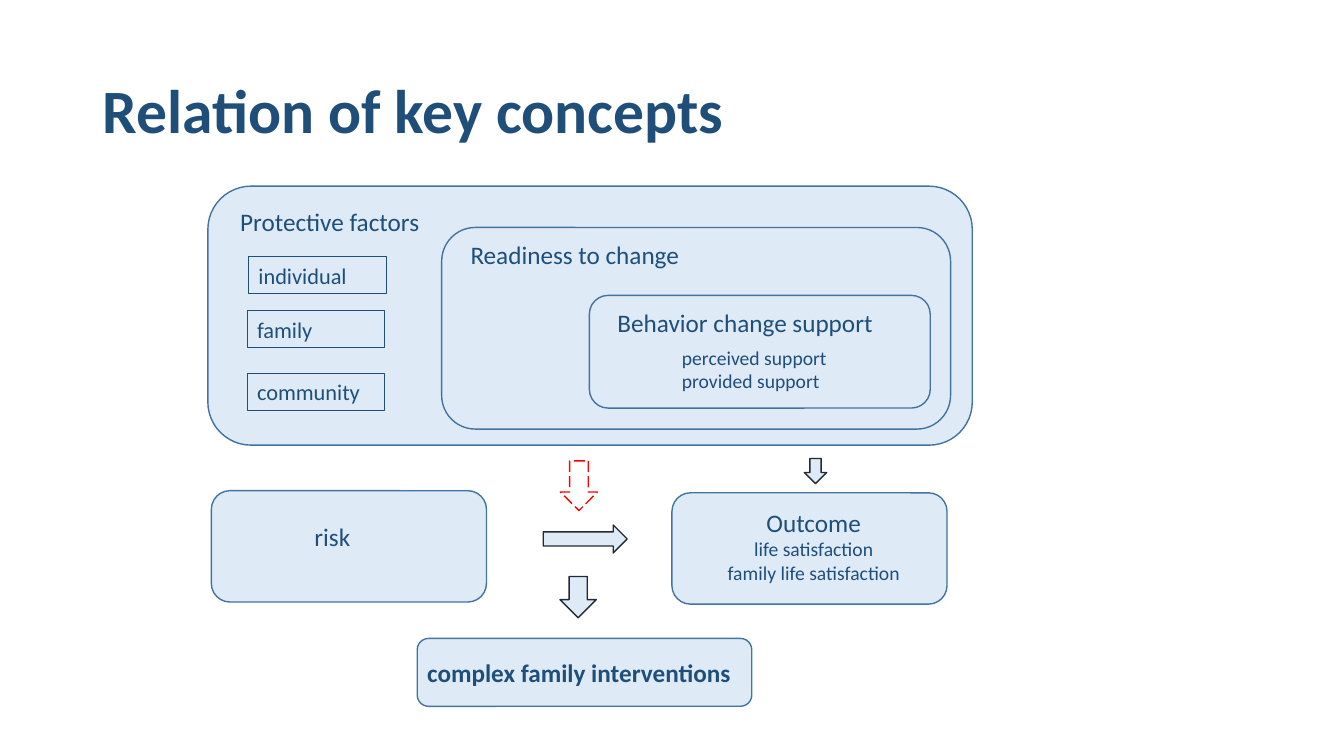
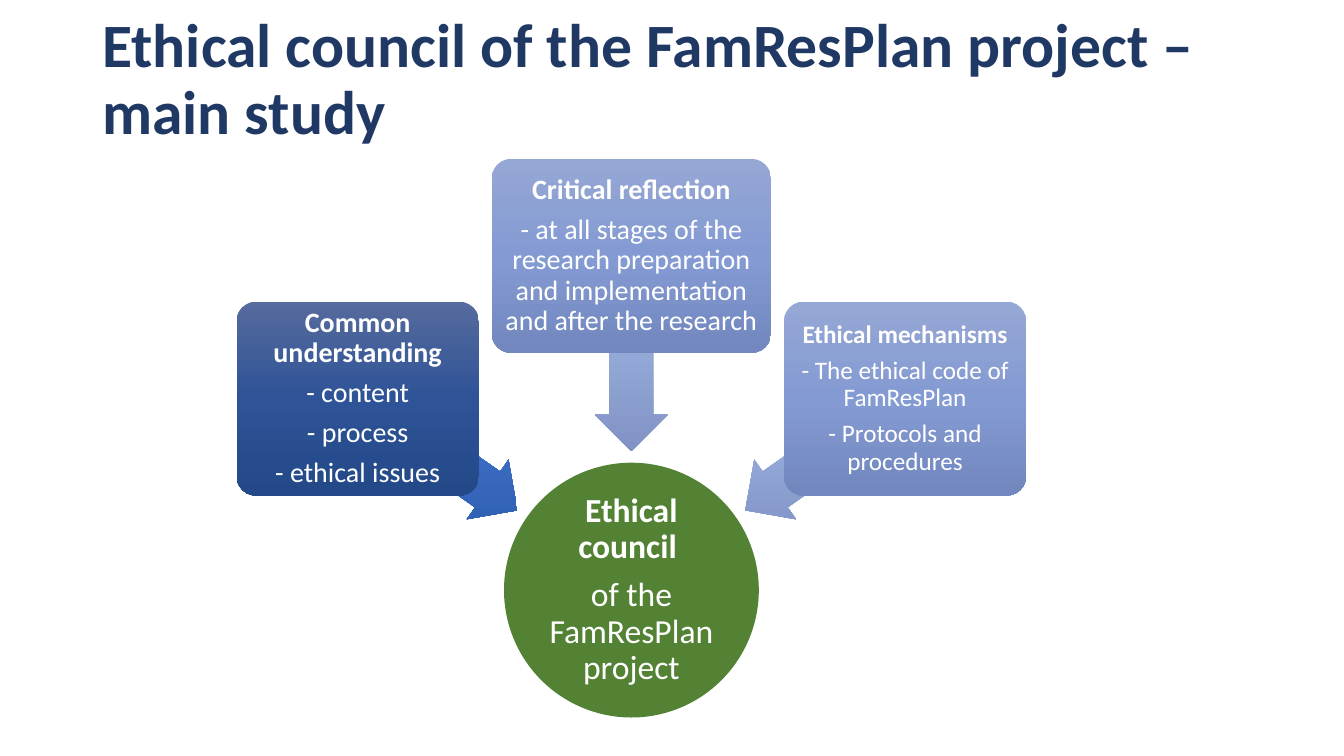
from collections import namedtuple
from copy import deepcopy

from pptx import Presentation
from pptx.dml.color import RGBColor
from pptx.enum.dml import MSO_LINE
from pptx.enum.shapes import MSO_SHAPE as Preset
from pptx.enum.text import MSO_ANCHOR as Anchor, MSO_AUTO_SIZE as AutoSize, PP_ALIGN as Align
from pptx.oxml.ns import qn
from pptx.util import Pt

Box = namedtuple("Box", "left top width height")

FONT = "Calibri"
NAVY = "1F4E79"
TITLE_NAVY = "203864"
PALE = "DEEBF7"
BORDER = "43739E"
ARROW_BORDER = "222A35"
RED = "FF0000"
GREEN = "548235"
WHITE = "FFFFFF"
DARK_CARD = ("566B9E", "2E5396", "244989")
LIGHT_CARD = ("95A7D4", "849AD2", "7187BE")
DARK_ARROW = ("5E7EC4", "3B6BC1", "2F5EB1")
LIGHT_ARROW = ("A4B3DB", "94A8D8", "8093C4")


def color(value):
    return RGBColor.from_string(value)


def inside(box, left, top, width, height):
    return Box(box.left + left, box.top + top, width, height)


def centered(x, y, width, height):
    return Box(x - width / 2, y - height / 2, width, height)


def points(box):
    return [Pt(length) for length in box]


def format_paragraph(paragraph, size, font_color, bold=False, align=Align.LEFT):
    paragraph.alignment = align
    paragraph.font.name = FONT
    paragraph.font.size = Pt(size)
    paragraph.font.bold = bold
    paragraph.font.color.rgb = color(font_color)


def fill_gradient(shape, colors):
    shape.fill.gradient()
    shape.fill.gradient_angle = 270
    gradient = shape._element.spPr.find(qn("a:gradFill"))
    gradient.set("rotWithShape", "0")
    stop_list = gradient.find(qn("a:gsLst"))
    stop_list.insert(1, deepcopy(stop_list[0]))
    for index, stop in enumerate(shape.fill.gradient_stops):
        stop.position = index / 2
        stop.color.rgb = color(colors[index])


def add_shape(slide, preset, box, fill=None, line=None, rotation=0):
    shape = slide.shapes.add_shape(preset, *points(box))
    shape.shadow.inherit = False
    shape.rotation = rotation
    if fill is None:
        shape.fill.background()
    elif isinstance(fill, tuple):
        fill_gradient(shape, fill)
    else:
        shape.fill.solid()
        shape.fill.fore_color.rgb = color(fill)
    if line is None:
        shape.line.fill.background()
    else:
        shape.line.color.rgb = color(line)
        shape.line.width = Pt(1)
    return shape


def add_label(slide, box, lines, size=18, bold=False, align=Align.LEFT):
    label = slide.shapes.add_textbox(*points(box))
    frame = label.text_frame
    frame.word_wrap = True
    frame.text = "\n".join(lines)
    for paragraph in frame.paragraphs:
        format_paragraph(paragraph, size, NAVY, bold, align)
    return label


def add_panel(slide, box):
    add_shape(slide, Preset.ROUNDED_RECTANGLE, box, PALE, BORDER)


def add_title_slide(presentation, text, top, font_color):
    slide = presentation.slides.add_slide(presentation.slide_layouts[5])
    title = slide.shapes.title
    title.left, title.top, title.width, title.height = points(Box(66, top, 828, 104.4))
    frame = title.text_frame
    frame.text = text
    frame.word_wrap = True
    frame.auto_size = AutoSize.NONE
    frame.vertical_anchor = Anchor.MIDDLE
    paragraph = frame.paragraphs[0]
    paragraph.line_spacing = 0.9
    format_paragraph(paragraph, 44, font_color, True)
    return slide


def add_support(slide, box):
    add_panel(slide, box)
    add_label(slide, inside(box, 13, 5, 199, 29), ["Behavior change support"])
    add_label(slide, inside(box, 59, 32.5, 123, 41), ["perceived support", "provided support"], 14)


def add_readiness(slide, box):
    add_panel(slide, box)
    add_label(slide, inside(box, 13.5, 5, 178, 29), ["Readiness to change"])
    add_support(slide, inside(box, 105.5, 48.5, 243.5, 80.5))


def add_protective_factors(slide, box):
    add_panel(slide, box)
    add_label(slide, inside(box, 16, 11, 151, 29), ["Protective factors"])
    factors = [("individual", 29, 50.5), ("family", 28, 89), ("community", 28, 133.5)]
    for name, left, top in factors:
        label = add_label(slide, inside(box, left, top, 98.5, 26.5), [name], 16)
        label.line.color.rgb = color(NAVY)
        label.line.width = Pt(0.75)
    add_readiness(slide, inside(box, 167, 29.5, 363.5, 144))


def add_risk(slide, box):
    add_panel(slide, box)
    add_label(slide, inside(box, 66.5, 18, 103, 29), ["risk"])


def add_outcome(slide, box):
    add_panel(slide, box)
    lines = ["Outcome", "life satisfaction", "family life satisfaction"]
    label = add_label(slide, inside(box, 29.5, 6.5, 143.5, 63), lines, 14, align=Align.CENTER)
    label.text_frame.paragraphs[0].font.size = Pt(18)


def add_interventions(slide, box):
    add_panel(slide, box)
    add_label(slide, inside(box, 0, 10, 253.5, 29), ["complex family interventions"], bold=True)


def add_concept_arrows(slide, box):
    arrows = [
        (194.5, 8.5, 18, 16, 90, PALE, ARROW_BORDER),
        (30, 57, 60, 20, 0, PALE, ARROW_BORDER),
        (25, 98.5, 29.5, 26, 90, PALE, ARROW_BORDER),
        (25.5, 19, 35.5, 26.5, 90, None, RED),
    ]
    for x, y, width, height, rotation, fill, line in arrows:
        place = centered(box.left + x, box.top + y, width, height)
        if rotation and fill:
            pass
        arrow = add_shape(slide, Preset.RIGHT_ARROW, place, fill, line, rotation)
        if line == RED:
            arrow.line.dash_style = MSO_LINE.LONG_DASH


def build_concepts(presentation):
    slide = add_title_slide(presentation, "Relation of key concepts", 28.8, NAVY)
    add_protective_factors(slide, Box(148.5, 133, 546, 185))
    add_risk(slide, Box(151, 350.5, 196.5, 79.5))
    add_outcome(slide, Box(480, 352, 196.5, 79.5))
    add_interventions(slide, Box(298, 456, 239, 48.5))
    add_concept_arrows(slide, Box(388, 328, 204, 115))


def write_block(shape, lines, size, inset):
    frame = shape.text_frame
    frame.word_wrap = True
    frame.vertical_anchor = Anchor.MIDDLE
    frame.margin_left = frame.margin_right = Pt(inset)
    frame.margin_top = frame.margin_bottom = Pt(inset)
    frame.text = "\n".join(lines)
    for index, paragraph in enumerate(frame.paragraphs):
        format_paragraph(paragraph, size, WHITE, index == 0, Align.CENTER)
        paragraph.line_spacing = 0.9
        paragraph.space_after = Pt(0.35 * size)


def add_council(slide, box):
    circle = add_shape(slide, Preset.OVAL, box, GREEN)
    write_block(circle, ["Ethical council ", "of the FamResPlan project"], 24, 1.5)


def add_card(slide, box, lines, size, fill):
    card = add_shape(slide, Preset.ROUNDED_RECTANGLE, box, fill)
    card.adjustments[0] = 0.1
    write_block(card, lines, size, 3)


def add_card_arrow(slide, box, rotation, fill):
    arrow = add_shape(slide, Preset.LEFT_ARROW, box, fill, rotation=rotation)
    arrow.adjustments[0] = 0.6
    arrow.adjustments[1] = 0.5


def add_council_diagram(slide, box):
    middle = box.left + box.width / 2
    add_council(slide, Box(middle - 91, box.top + box.height - 182, 182, 182))
    cards = [
        (["Common understanding", "- content", "- process", "- ethical issues"],
         20, -195.5, 102, 173, DARK_CARD, -138.5, 211, 215, DARK_ARROW),
        (["Critical reflection",
          "- at all stages of the research preparation and implementation and after the research"],
         20, 0, 0, 199.5, LIGHT_CARD, 0, 139, 270, LIGHT_ARROW),
        (["Ethical mechanisms", "- The ethical code of FamResPlan", "- Protocols and procedures"],
         18, 195.5, 102, 173, LIGHT_CARD, 138.5, 211, 325, LIGHT_ARROW),
    ]
    for lines, size, x, top, width, fill, arrow_x, arrow_y, rotation, arrow_fill in cards:
        arrow_box = centered(middle + arrow_x, box.top + arrow_y, 139.5, 52)
        add_card_arrow(slide, arrow_box, rotation, arrow_fill)
        card_box = Box(middle + x - width / 2, box.top + top, width, 138.5)
        add_card(slide, card_box, lines, size, fill)


def build_council(presentation):
    title = "Ethical council of the FamResPlan project – main study"
    slide = add_title_slide(presentation, title, 5.8, TITLE_NAVY)
    add_council_diagram(slide, Box(169, 113.5, 564, 399))


def main():
    presentation = Presentation()
    presentation.slide_width = Pt(960)
    presentation.slide_height = Pt(540)
    build_concepts(presentation)
    build_council(presentation)
    presentation.save("out.pptx")


if __name__ == "__main__":
    main()
